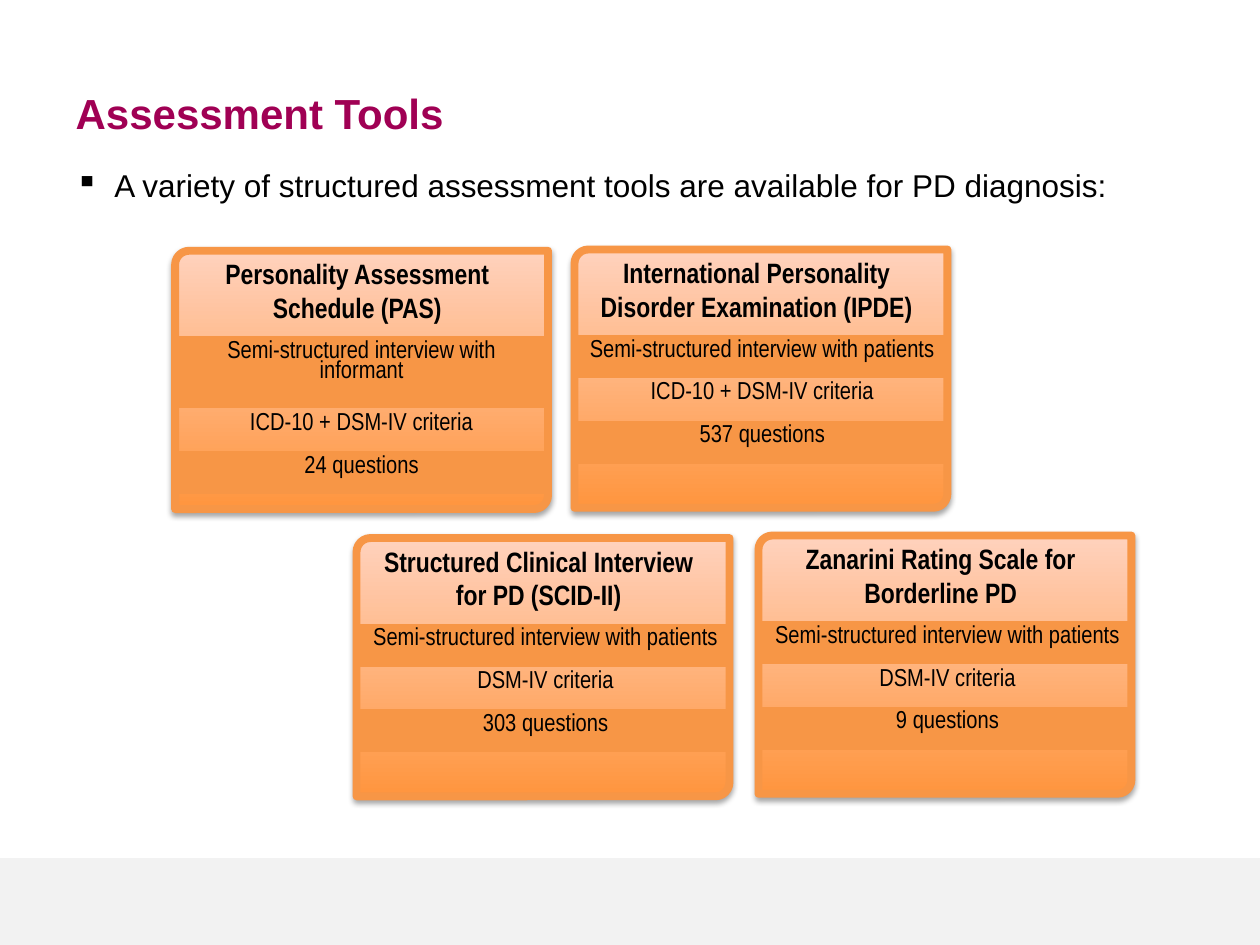
"""Build the slide of four structured assessment tools for PD diagnosis."""

from dataclasses import dataclass

import pptx
import pptx.dml.color
import pptx.enum.shapes
import pptx.enum.text
import pptx.oxml
import pptx.oxml.ns
import pptx.util
from pptx.shapes.autoshape import Shape
from pptx.slide import Slide
from pptx.text.text import TextFrame

PX = 9144
ALIGN = pptx.enum.text.PP_ALIGN
ANCHOR = pptx.enum.text.MSO_ANCHOR
KIND = pptx.enum.shapes.MSO_SHAPE
PLAIN = "{2D5ABB26-0587-4C30-8999-92F81FD0307C}"


@dataclass(frozen=True)
class Theme:
    title: str = "A00054"
    ink: str = "000000"
    band: str = "F2F2F2"
    edge: str = "F79646"
    deep: str = "FF953E"
    pale: str = "FFD2BD"
    sans: str = "Arial"
    slim: str = "Arial Narrow"
    big: int = 24
    body: int = 18
    head: int = 16
    cell: int = 14


@dataclass(frozen=True)
class Card:
    left: int
    top: int
    shift: int
    name: str
    rows: tuple[str, ...]
    first: int = 34


LOOK = Theme()
WIDE, TALL, ROW, DROP = 296, 205, 34, 68
PEOPLE = "Semi-structured interview with patients"
BOTH = "ICD-10 + DSM-IV criteria"
CARDS = (
    Card(139, 199, 0, "Personality Assessment Schedule (PAS)",
         ("Semi-structured interview with informant", BOTH, "24 questions"), 57),
    Card(456, 198, 1, "International Personality Disorder Examination (IPDE)",
         (PEOPLE, BOTH, "537 questions")),
    Card(283, 427, 2, "Structured Clinical Interview for PD (SCID-II)",
         (PEOPLE, "DSM-IV criteria", "303 questions")),
    Card(602, 425, 2, "Zanarini Rating Scale for Borderline PD",
         (PEOPLE, "DSM-IV criteria", "9 questions")),
)


def rgb(code: str) -> pptx.dml.color.RGBColor:
    return pptx.dml.color.RGBColor.from_string(code)


def box(left: int, top: int, wide: int, tall: int) -> tuple[int, ...]:
    return tuple(side * PX for side in (left, top, wide, tall))


def write(frame: TextFrame, text: str, face: str, size: int, align: ALIGN,
          ink: str = LOOK.ink, bold: bool = False) -> None:
    frame.text = text
    frame.word_wrap = True
    para = frame.paragraphs[0]
    para.alignment = align
    font = para.runs[0].font
    font.name, font.size, font.bold = face, pptx.util.Pt(size), bold
    font.color.rgb = rgb(ink)


def shade(shape: Shape) -> None:
    shape.shadow.inherit = False
    glow = shape.element.spPr.find(pptx.oxml.ns.qn("a:effectLst"))
    glow.append(pptx.oxml.parse_xml(
        f'<a:outerShdw {pptx.oxml.ns.nsdecls("a")} blurRad="39370" dist="22860"'
        ' dir="5400000" rotWithShape="0"><a:srgbClr val="000000">'
        '<a:alpha val="35000"/></a:srgbClr></a:outerShdw>'))


def panel(slide: Slide, card: Card) -> None:
    shape = slide.shapes.add_shape(
        KIND.ROUND_2_DIAG_RECTANGLE, *box(card.left, card.top, WIDE, TALL))
    shape.adjustments[0], shape.adjustments[1] = 0.054, 0
    shape.fill.gradient()
    shape.fill.gradient_angle = 90
    for stop, code, spot in zip(shape.fill.gradient_stops, (LOOK.deep, LOOK.pale), (0, 1)):
        stop.color.rgb, stop.position = rgb(code), spot
    shape.line.color.rgb = rgb(LOOK.edge)
    shape.line.width = pptx.util.Pt(4.5)
    shade(shape)


def grid(slide: Slide, card: Card) -> None:
    highs = (card.first, ROW, ROW)
    table = slide.shapes.add_table(
        3, 1, *box(card.left + card.shift, card.top + DROP, WIDE, sum(highs))).table
    table.first_row = table.horz_banding = False
    mark = table._tbl.tblPr.find(pptx.oxml.ns.qn("a:tableStyleId"))
    mark.text = PLAIN
    for num, (text, high) in enumerate(zip(card.rows, highs)):
        table.rows[num].height = high * PX
        cell = table.cell(num, 0)
        write(cell.text_frame, text, LOOK.slim, LOOK.cell, ALIGN.CENTER)
        cell.text_frame.paragraphs[0].line_spacing = 0.85
        if num % 2:
            cell.fill.background()
        else:
            cell.fill.solid()
            cell.fill.fore_color.rgb = rgb(LOOK.edge)


def draw(slide: Slide, card: Card) -> None:
    panel(slide, card)
    head = slide.shapes.add_textbox(*box(card.left, card.top, 289, 184))
    write(head.text_frame, card.name, LOOK.slim, LOOK.head, ALIGN.CENTER, bold=True)
    grid(slide, card)


def band(slide: Slide) -> None:
    shape = slide.shapes.add_shape(KIND.RECTANGLE, *box(0, 681, 1000, 69))
    shape.shadow.inherit = False
    shape.fill.solid()
    shape.fill.fore_color.rgb = rgb(LOOK.band)
    shape.line.fill.background()


def intro(slide: Slide) -> None:
    title = slide.shapes.title
    title.left, title.top, title.width, title.height = box(50, 62, 850, 55)
    write(title.text_frame, "Assessment Tools", LOOK.sans, LOOK.big, ALIGN.LEFT,
          LOOK.title, True)
    title.text_frame.vertical_anchor = ANCHOR.MIDDLE
    lead = slide.shapes.add_textbox(*box(50, 127, 920, 40)).text_frame
    write(lead, "A variety of structured assessment tools are available for PD diagnosis:",
          LOOK.sans, LOOK.body, ALIGN.LEFT)
    props = lead.paragraphs[0]._p.get_or_add_pPr()
    props.set("marL", str(31 * PX))
    props.set("indent", str(-31 * PX))
    props.append(pptx.oxml.parse_xml(
        f'<a:buChar {pptx.oxml.ns.nsdecls("a")} char="▪"/>'))


def main() -> None:
    deck = pptx.Presentation()
    deck.slide_width, deck.slide_height = 1000 * PX, 750 * PX
    slide = deck.slides.add_slide(deck.slide_layouts[5])
    band(slide)
    intro(slide)
    for card in CARDS:
        draw(slide, card)
    deck.save("out.pptx")


if __name__ == "__main__":
    main()
